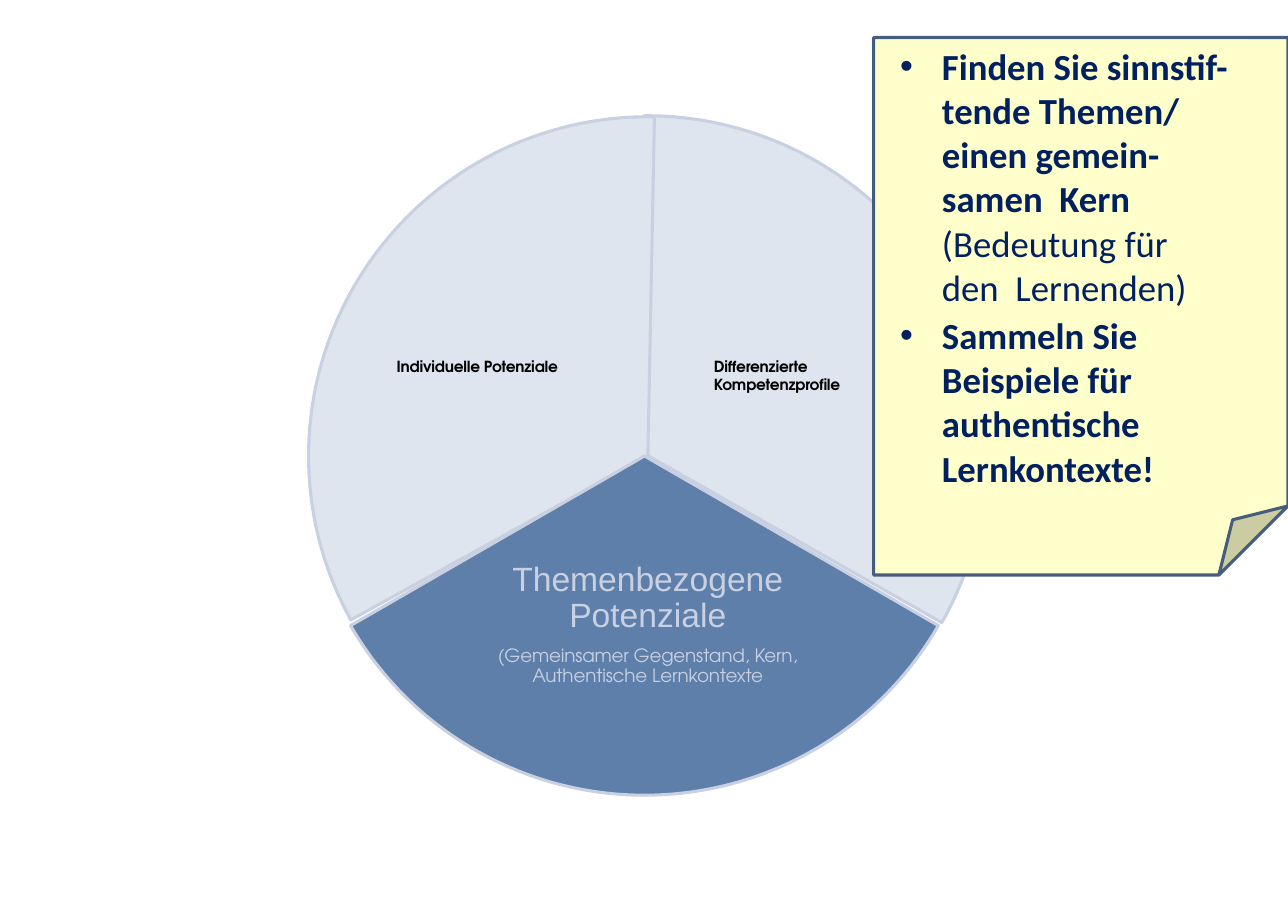
from dataclasses import dataclass

from lxml import etree
from pptx import Presentation
from pptx import util as u
from pptx.dml.color import RGBColor
from pptx.enum import shapes, text
from pptx.oxml import ns

PX = 9144
PIE_SIZE = 616

BLACK = RGBColor(0x00, 0x00, 0x00)
NAVY = RGBColor(0x00, 0x20, 0x60)
BLUE = RGBColor(0x5D, 0x7F, 0xAA)
PALE_BLUE = RGBColor(0xDF, 0xE5, 0xEE)
OUTLINE = RGBColor(0xC8, 0xD0, 0xE2)
NOTE_YELLOW = RGBColor(0xFF, 0xFF, 0xCC)
NOTE_EDGE = RGBColor(0x45, 0x5E, 0x7E)


@dataclass(frozen=True)
class Area:
    left: int
    top: int
    width: int
    height: int

    def emu(self) -> list[int]:
        return [side * PX for side in (self.left, self.top, self.width, self.height)]


@dataclass(frozen=True)
class Sector:
    left: int
    top: int
    rotation: float
    fill: RGBColor


@dataclass(frozen=True)
class Span:
    words: str
    font: str
    size: int
    color: RGBColor
    bold: bool = False
    tracking: int = 0


@dataclass(frozen=True)
class Label:
    area: Area
    words: str


SECTORS = [
    Sector(279, 105, 239.6, PALE_BLUE),
    Sector(280, 106, 121.1, PALE_BLUE),
    Sector(277, 106, 0, BLUE),
]
LABELS = [
    Label(Area(647, 323, 139, 35), "Differenzierte Kompetenzprofile"),
    Label(Area(359, 323, 153, 18), "Individuelle Potenziale"),
]
NOTE_ITEMS = [
    [
        ("Finden Sie sinnstif-tende Themen/ einen gemein-samen  Kern ", True),
        ("(Bedeutung für den  Lernenden)", False),
    ],
    [("Sammeln Sie Beispiele für authentische Lernkontexte!", True)],
]
THEME_SPANS = [
    Span("Themenbezogene Potenziale", "Arial", 22, OUTLINE),
    Span("(Gemeinsamer Gegenstand, Kern, Authentische Lernkontexte",
         "TeX Gyre Adventor", 12, OUTLINE, tracking=-10),
]


def add_figure(page, kind: shapes.MSO_SHAPE, area: Area, fill: RGBColor, edge: RGBColor):
    figure = page.shapes.add_shape(kind, *area.emu())
    figure.shadow.inherit = False
    figure.fill.solid()
    figure.fill.fore_color.rgb = fill
    figure.line.color.rgb = edge
    figure.line.width = u.Pt(2)
    return figure


def add_sector(page, sector: Sector) -> None:
    area = Area(sector.left, sector.top, PIE_SIZE, PIE_SIZE)
    pie = add_figure(page, shapes.MSO_SHAPE.PIE, area, sector.fill, OUTLINE)
    pie.adjustments[0], pie.adjustments[1] = 18, 90
    pie.rotation = sector.rotation


def add_box(page, area: Area, insets: tuple[int, int, int, int]):
    box = page.shapes.add_textbox(*area.emu())
    frame = box.text_frame
    frame.word_wrap = True
    frame.margin_left, frame.margin_top, frame.margin_right, frame.margin_bottom = (
        inset * PX for inset in insets)
    return box


def add_span(para, span: Span) -> None:
    run = para.add_run()
    run.text = span.words
    run.font.name = span.font
    run.font.size = u.Pt(span.size)
    run.font.bold = span.bold
    run.font.color.rgb = span.color
    if span.tracking:
        run._r.get_or_add_rPr().set("spc", str(span.tracking))


def add_bullet(para) -> None:
    properties = para._p.get_or_add_pPr()
    properties.set("marL", str(48 * PX))
    properties.set("indent", str(-38 * PX))
    etree.SubElement(properties, ns.qn("a:buFont")).set("typeface", "Arial")
    etree.SubElement(properties, ns.qn("a:buChar")).set("char", "•")


def next_paragraph(frame, index: int):
    return frame.add_paragraph() if index else frame.paragraphs[0]


def add_label(page, label: Label) -> None:
    box = add_box(page, label.area, (1, 1, 0, 0))
    span = Span(label.words, "TeX Gyre Adventor", 10, BLACK, True, -10)
    add_span(box.text_frame.paragraphs[0], span)


def add_note(page) -> None:
    add_figure(page, shapes.MSO_SHAPE.FOLDED_CORNER, Area(793, 34, 376, 488),
               NOTE_YELLOW, NOTE_EDGE)
    box = add_box(page, Area(807, 36, 326, 413), (0, 4, 17, 0))
    box.fill.solid()
    box.fill.fore_color.rgb = NOTE_YELLOW
    for index, item in enumerate(NOTE_ITEMS):
        para = next_paragraph(box.text_frame, index)
        if index:
            para.space_before = u.Pt(3.1)
        add_bullet(para)
        for words, bold in item:
            add_span(para, Span(words, "Calibri", 24, NAVY, bold))


def add_theme(page) -> None:
    frame = add_box(page, Area(423, 505, 330, 124), (3, 3, 3, 3)).text_frame
    frame.vertical_anchor = text.MSO_ANCHOR.MIDDLE
    for index, span in enumerate(THEME_SPANS):
        para = next_paragraph(frame, index)
        para.alignment = text.PP_ALIGN.CENTER
        para.line_spacing = 0.9
        para.space_after = u.Pt(0.35 * span.size)
        add_span(para, span)


def main() -> None:
    """Build the slide on potentials and learning contexts."""
    deck = Presentation()
    deck.slide_width, deck.slide_height = 1169 * PX, 827 * PX
    page = deck.slides.add_slide(deck.slide_layouts[6])
    for sector in SECTORS:
        add_sector(page, sector)
    add_note(page)
    for label in LABELS:
        add_label(page, label)
    add_theme(page)
    deck.save("out.pptx")


if __name__ == "__main__":
    main()
